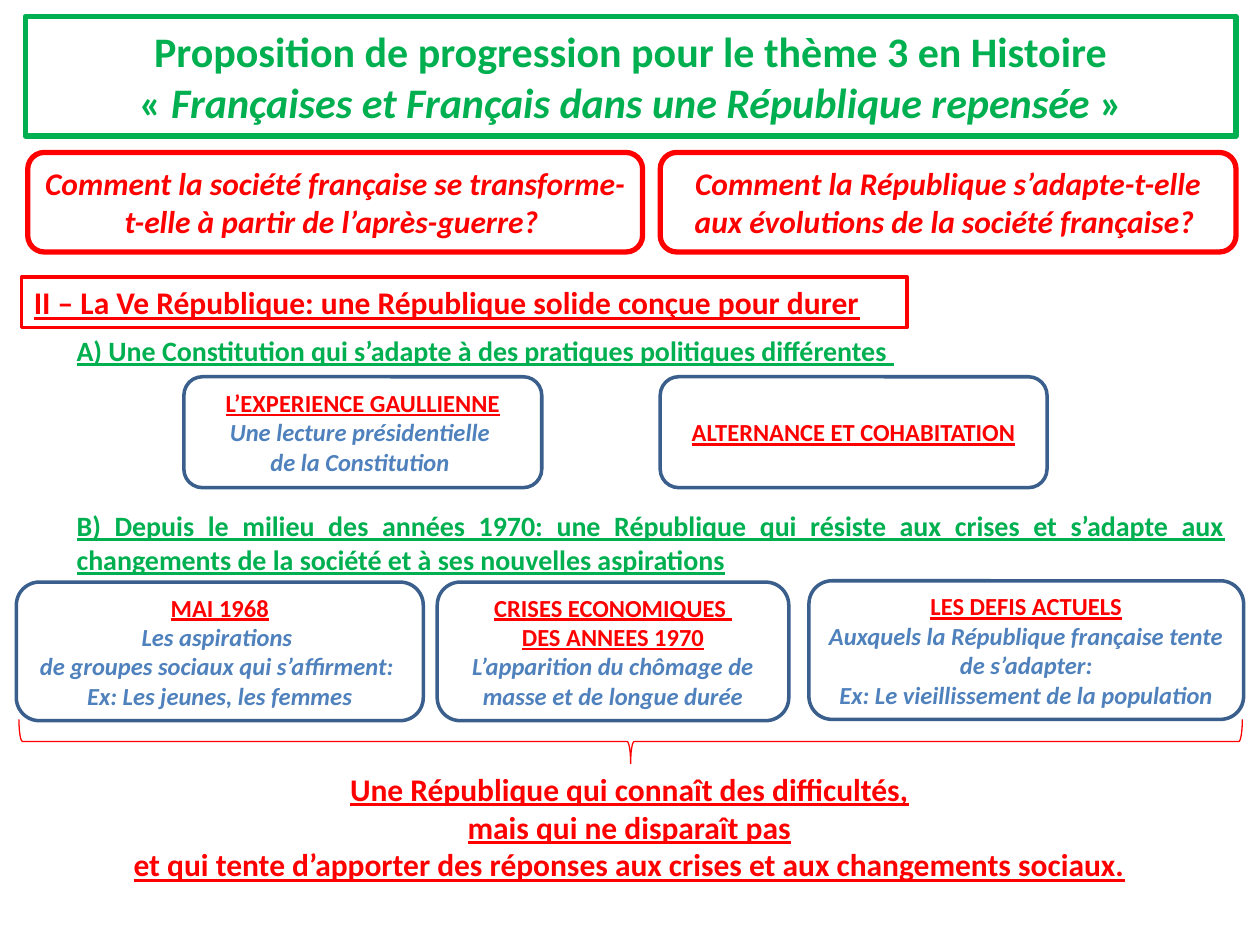
import pptx
import pptx.util
import pptx.dml.color
import pptx.enum.shapes
import pptx.enum.text

Kind = pptx.enum.shapes.MSO_SHAPE
Align = pptx.enum.text.PP_ALIGN
Anchor = pptx.enum.text.MSO_ANCHOR
Fit = pptx.enum.text.MSO_AUTO_SIZE

COLORS = {"red": "FF0000", "green": "00B050", "blue": "4F81BD",
          "navy": "3A5F8C", "white": "FFFFFF"}
COLS, ROWS = 100, 75
deck = pptx.Presentation()
deck.slide_width = pptx.util.Inches(10)
deck.slide_height = pptx.util.Inches(7.5)
slide = deck.slides.add_slide(deck.slide_layouts[6])


def place(box):
    """Turn grid columns and rows into slide lengths."""
    x, y, w, h = box
    col, row = deck.slide_width / COLS, deck.slide_height / ROWS
    return [round(n) for n in (x * col, y * row, w * col, h * row)]


def within(box, part):
    """Shift a part's box by the corner of the region that holds it."""
    return (box[0] + part[0], box[1] + part[1], part[2], part[3])


def color(name):
    return pptx.dml.color.RGBColor.from_string(COLORS[name])


def write(frame, lines, size, align):
    """Each line is a list of runs: (text, colour, marks), marks from 'iu'."""
    frame.word_wrap = True
    for i, line in enumerate(lines):
        para = frame.add_paragraph() if i else frame.paragraphs[0]
        para.alignment = align
        for text, ink, marks in line:
            run = para.add_run()
            run.text = text
            font = run.font
            font.name, font.size, font.bold = "Calibri", pptx.util.Pt(size), True
            font.italic, font.underline = "i" in marks, "u" in marks
            font.color.rgb = color(ink)


def frame(box, kind, edge, width, fill=None):
    shape = slide.shapes.add_shape(kind, *place(box))
    shape.shadow.inherit = False
    if fill:
        shape.fill.solid()
        shape.fill.fore_color.rgb = color(fill)
    else:
        shape.fill.background()
    shape.line.color.rgb = color(edge)
    shape.line.width = pptx.util.Pt(width)
    shape.text_frame.vertical_anchor = Anchor.MIDDLE
    return shape


def label(box, lines, ink, size, align=Align.JUSTIFY):
    text = slide.shapes.add_textbox(*place(box)).text_frame
    write(text, [[(line, ink, "u")] for line in lines], size, align)
    text.auto_size = Fit.SHAPE_TO_FIT_TEXT


def card(box, heads, notes):
    """Blue rounded card: red headings above blue notes."""
    shape = frame(box, Kind.ROUNDED_RECTANGLE, "navy", 2)
    lines = [[(t, "red", "u")] for t in heads] + [[(t, "blue", "i")] for t in notes]
    write(shape.text_frame, lines, 14, Align.CENTER)


def title(box):
    shape = frame(box, Kind.RECTANGLE, "green", 3, "white")
    lines = [
        [("Proposition de progression pour le thème 3 en Histoire", "green", "")],
        [("« ", "green", ""),
         ("Françaises et Français dans une République repensée", "green", "i"),
         (" »", "green", "")],
    ]
    write(shape.text_frame, lines, 24, Align.CENTER)


def asks(box):
    parts = [
        (0, 48.8, "Comment la société française se transforme-t-elle "
                  "à partir de l’après-guerre? "),
        (50.2, 45.7, "Comment la République s’adapte-t-elle "
                     "aux évolutions de la société française? "),
    ]
    for x, w, text in parts:
        shape = frame(within(box, (x, 0, w, box[3])),
                      Kind.ROUNDED_RECTANGLE, "red", 3, "white")
        write(shape.text_frame, [[(text, "red", "i")]], 18, Align.CENTER)


def chapter(box):
    frame(within(box, (0, 0, 70.3, box[3])), Kind.RECTANGLE, "red", 2)
    label(box, ["II – La Ve République: une République solide conçue pour durer"],
          "red", 18)


def section(box, head, text, cards):
    """Green heading, then a row of cards."""
    label(within(box, head), [text], "green", 16)
    for part, heads, notes in cards:
        card(within(box, part), heads, notes)


def close(box):
    # Brace under the cards: drawn upright, then turned to point down
    long, deep = box[2], 3.5
    brace = frame(within(box, ((long - deep) / 2, (deep - long) / 2, deep, long)),
                  Kind.RIGHT_BRACE, "red", 0.75)
    brace.adjustments[0], brace.adjustments[1] = 0.08, 0.5
    brace.rotation = 90
    # Conclusion
    label(within(box, (7.9, deep, 81.1, box[3] - deep)),
          ["Une République qui connaît des difficultés,",
           "mais qui ne disparaît pas",
           "et qui tente d’apporter des réponses aux crises "
           "et aux changements sociaux. "],
          "red", 18, Align.CENTER)


# Header and guiding questions
title((2, 1.3, 96.1, 9.5))
asks((2.2, 12.1, 95.9, 7.9))

# Chapter and its two sections
chapter((1.7, 22, 98.3, 4))
section((5.1, 26, 86.6, 12.7), (0, 0, 86.6, 3.7),
        "A) Une Constitution qui s’adapte à des pratiques politiques différentes ",
        [((9.5, 3.9, 28.4, 8.8), ["L’EXPERIENCE GAULLIENNE"],
          ["Une lecture présidentielle ", "de la Constitution "]),
         ((47.3, 3.9, 30.7, 8.8), ["ALTERNANCE ET COHABITATION"], [])])
section((1.3, 39.9, 97.4, 17.3), (3.8, 0, 93.1, 6.4),
        "B) Depuis le milieu des années 1970: une République qui résiste aux "
        "crises et s’adapte aux changements de la société et à ses nouvelles "
        "aspirations",
        [((0, 6.3, 32.3, 11), ["MAI 1968"],
          ["Les aspirations ", "de groupes sociaux qui s’affirment: ",
           "Ex: Les jeunes, les femmes"]),
         ((33.4, 6.3, 27.9, 11), ["CRISES ECONOMIQUES ", "DES ANNEES 1970"],
          ["L’apparition du chômage de masse et de longue durée"]),
         ((62.9, 6.2, 34.5, 11), ["LES DEFIS ACTUELS"],
          ["Auxquels la République française tente de s’adapter:",
           "Ex: Le vieillissement de la population"])])

# Conclusion
close((1.5, 57.1, 97.1, 13.6))

deck.save("out.pptx")
